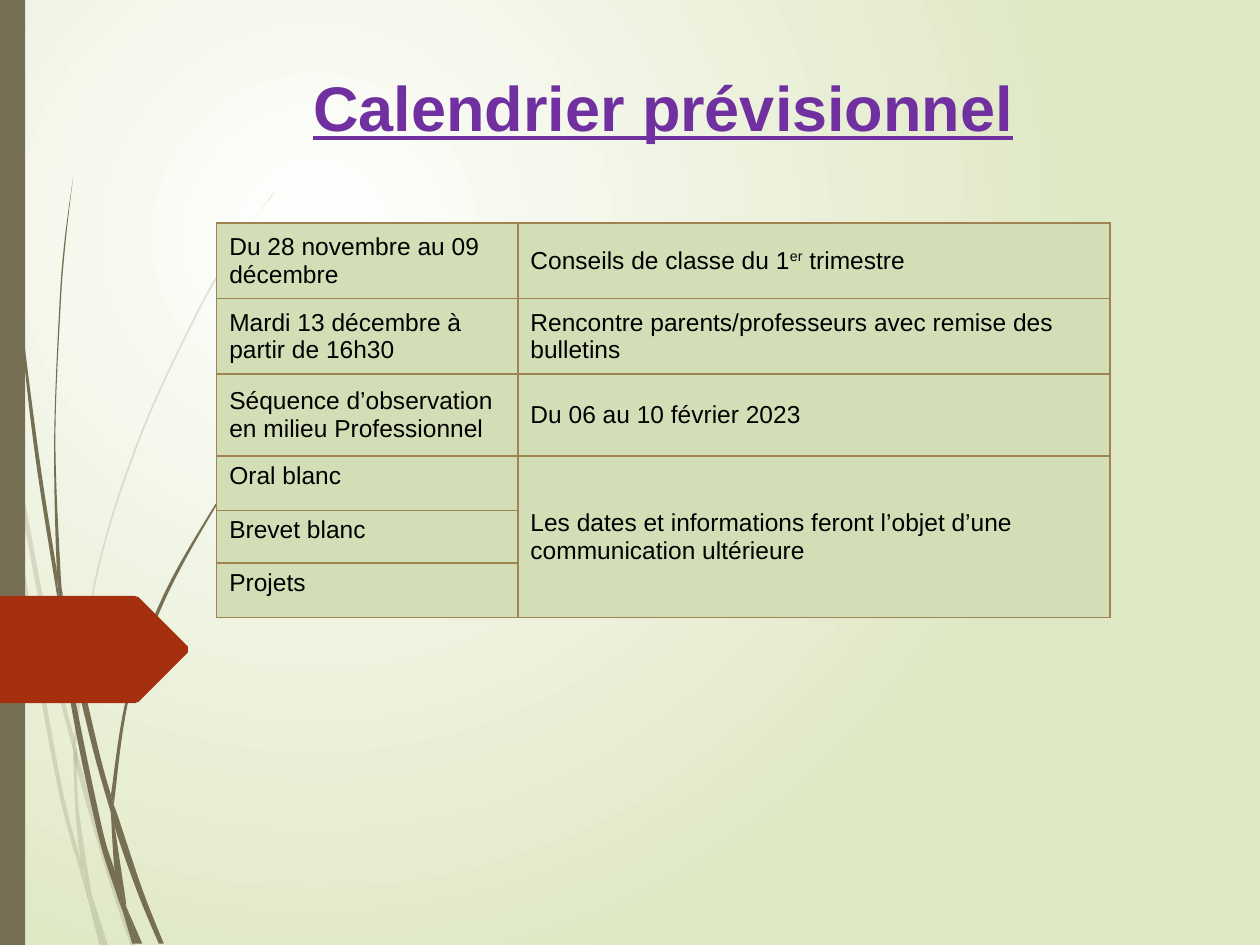
import dataclasses

import pptx
import pptx.dml.color
import pptx.enum.shapes
import pptx.enum.text
import pptx.oxml
import pptx.oxml.ns
import pptx.util

Inches = pptx.util.Inches
Pt = pptx.util.Pt
Align = pptx.enum.text.PP_ALIGN
Anchor = pptx.enum.text.MSO_ANCHOR
qn = pptx.oxml.ns.qn
NAMESPACE = 'xmlns:a="http://schemas.openxmlformats.org/drawingml/2006/main"'


@dataclasses.dataclass(frozen=True)
class Theme:
    font: str = "Arial"
    title_size: int = 36
    cell_size: int = 14
    title: str = "7030A0"
    text: str = "000000"
    cell: str = "D4DEB6"
    border: str = "9F8351"
    stem: str = "766F54"
    arrow: str = "A53010"
    center: str = "FFFFFF"
    edge: str = "DFE8C4"


THEME = Theme()

PALE_BLADES = [
    ([(0.08, 3.5), (0.06, 3.22), (0, 2.82)], [(0, 2.99), (0.07, 3.44)]),
    ([(0.1, 3.45), (0.12, 3.76), (0.4, 5.22), (0.59, 5.99)], [(0.59, 5.86), (0.43, 5.2), (0.1, 3.45)]),
    ([(0.61, 5.96), (0.61, 6.1), (0.85, 6.94), (1.04, 7.51)], [(1.08, 7.51), (0.88, 6.92), (0.64, 6.07), (0.61, 5.96)]),
    ([(0.73, 7.11), (0.83, 7.51)], [(0.86, 7.51), (0.73, 7.11)]),
    ([(0.08, 3.5), (0.19, 4.7), (0.45, 6.21), (0.64, 6.93), (0.7, 7.14)],
     [(0.69, 7.07), (0.64, 6.83), (0.48, 6.19), (0.22, 4.69), (0.12, 3.76), (0.08, 3.5)]),
    ([(0.58, 5.99), (0.6, 6.46), (0.64, 6.83), (0.67, 6.92), (0.73, 7.11)],
     [(0.72, 7.06), (0.63, 6.46), (0.61, 6.1), (0.61, 6.08), (0.58, 5.99)]),
    ([(0.61, 5.96), (0.61, 5.84), (0.76, 4.62), (1.11, 3.49), (1.59, 2.45), (1.87, 1.98), (2.01, 1.75), (2.17, 1.54)],
     [(2.17, 1.53), (2.01, 1.75), (1.86, 1.97), (1.58, 2.44), (1.1, 3.48), (0.75, 4.61), (0.59, 5.84), (0.59, 5.86)]),
    ([(0.7, 7.14), (0.79, 7.51)], [(0.82, 7.51), (0.7, 7.14)]),
    ([(0.61, 6.08), (0.61, 6.1), (0.61, 5.96)], [(0.59, 5.86), (0.58, 5.99), (0.61, 6.08)]),
    ([(0.65, 6.83), (0.69, 7.07), (0.7, 7.14), (0.82, 7.51)], [(0.83, 7.51), (0.73, 7.11), (0.67, 6.92), (0.65, 6.83)]),
]
DARK_BLADES = [
    ([(0.02, 0), (0.03, 0.48), (0.05, 1.1), (0.14, 2.33), (0.27, 3.55), (0.46, 4.77), (0.47, 4.81)],
     [(0.45, 4.57), (0.45, 4.53), (0.3, 3.55), (0.15, 2.32), (0.06, 1.09), (0.04, 0.48), (0.03, 0)]),
    ([(0.5, 4.72), (0.53, 5.05), (0.73, 5.92), (0.88, 6.45)], [(0.88, 6.33), (0.88, 6.31), (0.77, 5.9), (0.5, 4.72)]),
    ([(0.91, 6.41), (0.91, 6.56), (1.09, 7.08), (1.26, 7.49)], [(1.3, 7.49), (1.13, 7.06), (0.94, 6.49), (0.91, 6.41)]),
    ([(0.47, 4.77), (0.56, 5.57), (0.77, 6.59), (0.92, 7.08), (0.97, 7.22)],
     [(0.96, 7.17), (0.91, 6.91), (0.81, 6.57), (0.6, 5.56), (0.53, 5.05), (0.47, 4.77)]),
    ([(0.5, 4.72), (0.48, 4.53), (0.44, 3.49), (0.48, 2.45), (0.52, 1.93), (0.58, 1.41)],
     [(0.58, 1.41), (0.51, 1.93), (0.47, 2.45), (0.43, 3.49), (0.45, 4.49), (0.49, 4.72)]),
    ([(1, 7.19), (1.1, 7.49)], [(1.13, 7.49), (1, 7.19)]),
    ([(0.45, 4.49), (0.45, 4.53), (0.47, 4.77), (0.53, 5.05)], [(0.5, 4.72), (0.49, 4.72), (0.45, 4.49)]),
    ([(0.91, 6.41), (0.91, 6.33), (1.03, 5.52), (1.31, 4.76), (1.69, 4.06), (1.91, 3.74), (2.03, 3.59), (2.16, 3.44)],
     [(2.15, 3.44), (2.03, 3.58), (1.91, 3.73), (1.68, 4.05), (1.29, 4.74), (1.01, 5.51), (0.88, 6.31)]),
    ([(0.97, 7.22), (1.05, 7.49)], [(1.08, 7.49), (0.97, 7.22)]),
    ([(0.88, 6.45), (0.91, 6.91), (0.96, 7.06), (1, 7.19)], [(1, 7.16), (0.91, 6.56), (0.9, 6.51), (0.88, 6.45)]),
    ([(0.88, 6.31), (0.88, 6.45), (0.91, 6.56)], [(0.91, 6.41), (0.88, 6.31)]),
    ([(0.91, 6.91), (0.96, 7.17), (0.97, 7.22), (1.08, 7.49)], [(1.1, 7.49), (1, 7.19), (0.96, 7.06), (0.91, 6.91)]),
]
ARROW = [(-0.03, 4.73), (1.07, 4.73), (1.1, 4.74), (1.49, 5.13),
         (1.49, 5.18), (1.1, 5.57), (1.07, 5.58), (-0.03, 5.58)]

COLUMNS = [2.39, 4.7]
ROWS = [0.6, 0.6, 0.65, 0.43, 0.42, 0.43]
CALENDAR = [
    ("Du 28 novembre au 09 décembre", "Conseils de classe du 1^er^ trimestre"),
    ("Mardi 13 décembre à partir de 16h30", "Rencontre parents/professeurs avec remise des bulletins"),
    ("Séquence d’observation en milieu Professionnel", "Du 06 au 10 février 2023"),
    ("Oral blanc", "Les dates et informations feront l’objet d’une communication ultérieure"),
    ("Brevet blanc", ""),
    ("Projets", ""),
]
FIRST_OPEN_ROW = 3


def rgb(color):
    return pptx.dml.color.RGBColor.from_string(color)


def write_text(frame, text, size, color, bold=False, underline=False, align=Align.LEFT):
    paragraph = frame.paragraphs[0]
    paragraph.alignment = align
    for index, part in enumerate(text.split("^")):
        run = paragraph.add_run()
        run.text = part
        font = run.font
        font.name, font.size, font.bold, font.underline = THEME.font, Pt(size), bold, underline
        font.color.rgb = rgb(color)
        if index % 2:
            font._element.set("baseline", "30000")


def paint(shape, color, opacity=100):
    shape.shadow.inherit = False
    shape.fill.solid()
    shape.fill.fore_color.rgb = rgb(color)
    shape.line.fill.background()
    if opacity < 100:
        color_element = shape._element.spPr.find(qn("a:solidFill"))[0]
        color_element.append(pptx.oxml.parse_xml(f'<a:alpha {NAMESPACE} val="{opacity * 1000}"/>'))


def add_outline(slide, points, color, opacity=100):
    corners = [(Inches(x), Inches(y)) for x, y in points]
    builder = slide.shapes.build_freeform(*corners[0])
    builder.add_line_segments(corners[1:], close=True)
    shape = builder.convert_to_shape()
    paint(shape, color, opacity)
    return shape


def bend_edge(nodes):
    points = [(int(node.get("x")), int(node.get("y"))) for node in nodes]
    padded = [points[0], *points, points[-1]]
    for node, a, b, c, d in zip(nodes[1:], padded, padded[1:], padded[2:], padded[3:]):
        controls = [[b[i] + (c[i] - a[i]) // 6 for i in (0, 1)],
                    [c[i] - (d[i] - b[i]) // 6 for i in (0, 1)], c]
        line = node.getparent()
        curve = "".join(f'<a:pt x="{x}" y="{y}"/>' for x, y in controls)
        line.getparent().replace(line, pptx.oxml.parse_xml(
            f"<a:cubicBezTo {NAMESPACE}>{curve}</a:cubicBezTo>"))


def add_blade(slide, down, up, opacity):
    shape = add_outline(slide, down + up, THEME.stem, opacity)
    nodes = list(shape._element.iter(qn("a:pt")))
    bend_edge(nodes[:len(down)])
    bend_edge(nodes[len(down):len(down) + len(up)])


def set_background(slide):
    fill = slide.background.fill
    fill.gradient()
    for stop, color in zip(fill.gradient_stops, (THEME.center, THEME.edge)):
        stop.color.rgb = rgb(color)
    gradient = slide._element.find(".//" + qn("a:gradFill"))
    gradient.remove(gradient.find(qn("a:lin")))
    gradient.append(pptx.oxml.parse_xml(
        f'<a:path {NAMESPACE} path="circle">'
        '<a:fillToRect l="50000" t="50000" r="100000" b="100000"/></a:path>'))


def add_decoration(slide):
    for blades, opacity in ((PALE_BLADES, 20), (DARK_BLADES, 100)):
        for down, up in blades:
            add_blade(slide, down, up, opacity)
    bar = slide.shapes.add_shape(
        pptx.enum.shapes.MSO_SHAPE.RECTANGLE, 0, 0, Inches(0.2), Inches(7.5))
    paint(bar, THEME.stem)
    add_outline(slide, ARROW, THEME.arrow)


def set_title(slide, text):
    title = slide.shapes.title
    title.left, title.top, title.width, title.height = map(Inches, (2.36, 0.49, 5.81, 0.71))
    frame = title.text_frame
    frame.word_wrap = False
    frame.auto_size = pptx.enum.text.MSO_AUTO_SIZE.SHAPE_TO_FIT_TEXT
    frame.vertical_anchor = Anchor.TOP
    write_text(frame, text, THEME.title_size, THEME.title,
               bold=True, underline=True, align=Align.CENTER)


def format_cell(cell):
    cell.fill.solid()
    cell.fill.fore_color.rgb = rgb(THEME.cell)
    properties = cell._tc.get_or_add_tcPr()
    for position, side in enumerate(("lnL", "lnR", "lnT", "lnB")):
        properties.insert(position, pptx.oxml.parse_xml(
            f'<a:{side} {NAMESPACE} w="12700"><a:solidFill>'
            f'<a:srgbClr val="{THEME.border}"/></a:solidFill></a:{side}>'))


def add_calendar(slide):
    table = slide.shapes.add_table(
        len(ROWS), len(COLUMNS), Inches(1.72), Inches(1.77),
        Inches(sum(COLUMNS)), Inches(sum(ROWS))).table
    for column, width in zip(table.columns, COLUMNS):
        column.width = Inches(width)
    for row, height in zip(table.rows, ROWS):
        row.height = Inches(height)
    table.cell(FIRST_OPEN_ROW, 1).merge(table.cell(len(ROWS) - 1, 1))
    for row, texts in enumerate(CALENDAR):
        for column, text in enumerate(texts):
            cell = table.cell(row, column)
            format_cell(cell)
            is_open_label = row >= FIRST_OPEN_ROW and column == 0
            cell.vertical_anchor = Anchor.TOP if is_open_label else Anchor.MIDDLE
            if text:
                write_text(cell.text_frame, text, THEME.cell_size, THEME.text)


def main():
    presentation = pptx.Presentation()
    presentation.slide_width, presentation.slide_height = Inches(10), Inches(7.5)
    slide = presentation.slides.add_slide(presentation.slide_layouts[5])
    set_background(slide)
    add_decoration(slide)
    set_title(slide, "Calendrier prévisionnel")
    add_calendar(slide)
    presentation.save("out.pptx")


if __name__ == "__main__":
    main()
